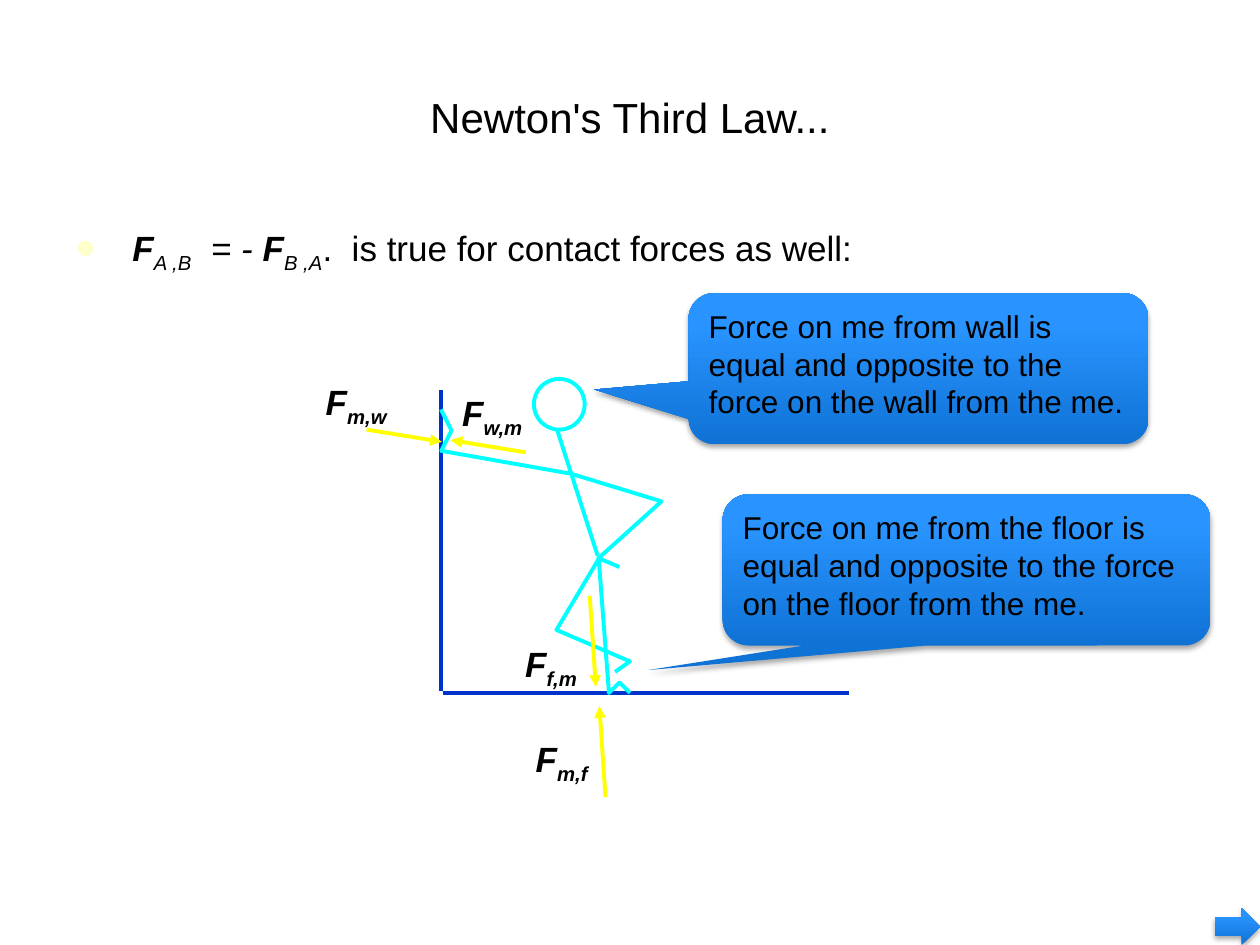
"""Build a slide on Newton's third law for contact forces."""
import lxml.etree
import pptx
import pptx.dml.color
import pptx.enum.shapes
import pptx.enum.text
import pptx.oxml
import pptx.oxml.ns
import pptx.util

Pt = pptx.util.Pt
qn = pptx.oxml.ns.qn
SHAPE = pptx.enum.shapes.MSO_SHAPE
ANCHOR = pptx.enum.text.MSO_ANCHOR
ALIGN = pptx.enum.text.PP_ALIGN
FIT = pptx.enum.text.MSO_AUTO_SIZE

COLORS = {
    "text": "000000",
    "bullet": "FFFFCC",
    "wall": "0033CC",
    "person": "00FFFF",
    "force": "FFFF00",
    "fill_dark": "0F72D5",
    "fill_mid": "2994FF",
    "fill_light": "2B95FF",
}
NAMESPACE = 'xmlns:a="http://schemas.openxmlformats.org/drawingml/2006/main"'
GRADIENT = (
    f'<a:gradFill {NAMESPACE} rotWithShape="1"><a:gsLst>'
    '<a:gs pos="0"><a:srgbClr val="{fill_dark}"/></a:gs>'
    '<a:gs pos="80000"><a:srgbClr val="{fill_mid}"/></a:gs>'
    '<a:gs pos="100000"><a:srgbClr val="{fill_light}"/></a:gs>'
    '</a:gsLst><a:lin ang="16200000" scaled="0"/></a:gradFill>'
)
SHADOW = (
    f'<a:effectLst {NAMESPACE}><a:outerShdw blurRad="{Pt(3.1)}" dist="{Pt(1.8)}" '
    'dir="5400000" rotWithShape="0"><a:srgbClr val="000000"><a:alpha val="35000"/>'
    '</a:srgbClr></a:outerShdw></a:effectLst>'
)
PLAIN = {"bold": False, "italic": False}
ITALIC = {"bold": False, "italic": True}
STRONG = {"bold": True, "italic": True}


def rgb(name):
    return pptx.dml.color.RGBColor.from_string(COLORS[name])


def set_values(target, values):
    for name, value in values.items():
        setattr(target, name, value)


def add_span(para, text, size, style, lowered=False):
    span = para.add_run()
    span.text = text
    set_values(span.font, {"name": "Arial", "size": Pt(size), **style})
    span.font.color.rgb = rgb("text")
    if lowered:
        span.font._element.set("baseline", "-25000")


def add_text(page, bounds, spans, size, frame_values, para_values):
    box = page.shapes.add_textbox(*map(Pt, bounds))
    set_values(box.text_frame, frame_values)
    para = box.text_frame.paragraphs[0]
    set_values(para, para_values)
    for span in spans:
        add_span(para, span[0], size, *span[1:])
    return para


def set_hanging(para, indent):
    properties = para._p.get_or_add_pPr()
    properties.set("marL", str(Pt(indent)))
    properties.set("indent", str(-Pt(indent)))
    return properties


def add_bullet(para):
    properties = set_hanging(para, 27)
    color = lxml.etree.SubElement(properties, qn("a:buClr"))
    lxml.etree.SubElement(color, qn("a:srgbClr")).set("val", COLORS["bullet"])
    lxml.etree.SubElement(properties, qn("a:buSzPct")).set("val", "75000")
    lxml.etree.SubElement(properties, qn("a:buChar")).set("char", "●")


def add_force_label(page, left, top, width, subscript):
    spans = [("F", STRONG), (subscript, STRONG, True)]
    frame_values = {"word_wrap": False, "auto_size": FIT.SHAPE_TO_FIT_TEXT}
    para = add_text(page, (left, top, width, 28.8), spans, 20,
                    frame_values, {"line_spacing": 0.9})
    set_hanging(para, 22.5)


def style_outline(line, color):
    line.color.rgb = rgb(color)
    line.width = Pt(2.25)


def add_line(page, start, end, color, arrow=False):
    connector = page.shapes.add_connector(
        pptx.enum.shapes.MSO_CONNECTOR.STRAIGHT, *map(Pt, (*start, *end)))
    style_outline(connector.line, color)
    properties = connector._element.spPr
    if arrow:
        outline = properties.find(qn("a:ln"))
        lxml.etree.SubElement(outline, qn("a:tailEnd")).set("type", "triangle")
    lxml.etree.SubElement(properties, qn("a:effectLst"))


def add_limb(page, points):
    start, *rest = [tuple(map(Pt, point)) for point in points]
    builder = page.shapes.build_freeform(*start)
    builder.add_line_segments(rest, close=False)
    limb = builder.convert_to_shape()
    limb.shadow.inherit = False
    limb.fill.background()
    style_outline(limb.line, "person")


def add_head(page):
    head = page.shapes.add_shape(SHAPE.OVAL, *map(Pt, (305.1, 216.5, 29, 29)))
    head.shadow.inherit = False
    head.fill.background()
    style_outline(head.line, "person")


def add_glossy_shape(page, kind, bounds):
    shape = page.shapes.add_shape(kind, *map(Pt, bounds))
    shape.line.fill.background()
    properties = shape._element.spPr
    gradient = pptx.oxml.parse_xml(GRADIENT.format(**COLORS))
    properties.find(qn("a:ln")).addprevious(gradient)
    properties.append(pptx.oxml.parse_xml(SHADOW))
    return shape


def add_callout(page, bounds, tip, text):
    callout = add_glossy_shape(page, SHAPE.ROUNDED_RECTANGULAR_CALLOUT, bounds)
    for index, value in enumerate((*tip, 0.17)):
        callout.adjustments[index] = value
    set_values(callout.text_frame, {"word_wrap": True, "vertical_anchor": ANCHOR.TOP})
    para = callout.text_frame.paragraphs[0]
    para.alignment = ALIGN.LEFT
    add_span(para, text, 18, PLAIN)


def add_person(page):
    add_head(page)
    add_line(page, (318.5, 246), (341.5, 317.5), "person")
    add_line(page, (325, 270.5), (251.5, 257.5), "person")
    for points in (
        [(252, 258), (258, 246), (252, 234)],
        [(324, 270), (378, 286.5), (342, 319), (354, 324)],
        [(342, 318), (348, 396), (354, 390), (360, 396)],
        [(343, 318), (318, 360), (360, 378), (351.5, 384)],
    ):
        add_limb(page, points)


def add_forces(page):
    for start, end in (
        ((300.5, 258.5), (257.5, 251.5)),
        ((209.5, 245.5), (252.5, 252.5)),
        ((346, 455.5), (342.5, 403.5)),
        ((337, 340.5), (340.5, 392.5)),
    ):
        add_line(page, start, end, "force", arrow=True)
    add_force_label(page, 179, 214.5, 53.5, "m,w")
    add_force_label(page, 257, 220.5, 52.5, "w,m")
    add_force_label(page, 299, 418.5, 51, "m,f")
    add_force_label(page, 293, 364, 47, "f,m")


def main():
    deck = pptx.Presentation()
    set_values(deck, {"slide_width": Pt(720), "slide_height": Pt(540)})
    page = deck.slides.add_slide(deck.slide_layouts[6])
    add_text(page, (36, 21.6, 648, 90), [("Newton's Third Law...", PLAIN)], 24,
             {"word_wrap": True, "vertical_anchor": ANCHOR.MIDDLE},
             {"alignment": ALIGN.CENTER})
    statement = [
        (" ", PLAIN), ("F", STRONG), ("A ,B", ITALIC, True), ("  = - ", ITALIC),
        ("F", STRONG), ("B ,A", ITALIC, True),
        (".  is true for contact forces as well:", PLAIN),
    ]
    add_bullet(add_text(page, (36, 126, 648, 356.4), statement, 20,
                        {"word_wrap": True}, {"space_before": Pt(4)}))
    add_line(page, (252, 223), (252, 395), "wall")
    add_line(page, (253, 396), (485, 396), "wall")
    add_person(page)
    add_forces(page)
    add_callout(page, (393.5, 167.5, 262.8, 86.4), (-0.705, 0.138),
                "Force on me from wall is equal and opposite to the force "
                "on the wall from the me.")
    add_callout(page, (413, 282.5, 278.6, 86.4), (-0.654, 0.663),
                "Force on me from the floor is equal and opposite to the force "
                "on the floor from the me.")
    add_glossy_shape(page, SHAPE.RIGHT_ARROW, (694, 519, 26, 21))
    deck.save("out.pptx")


if __name__ == "__main__":
    main()
